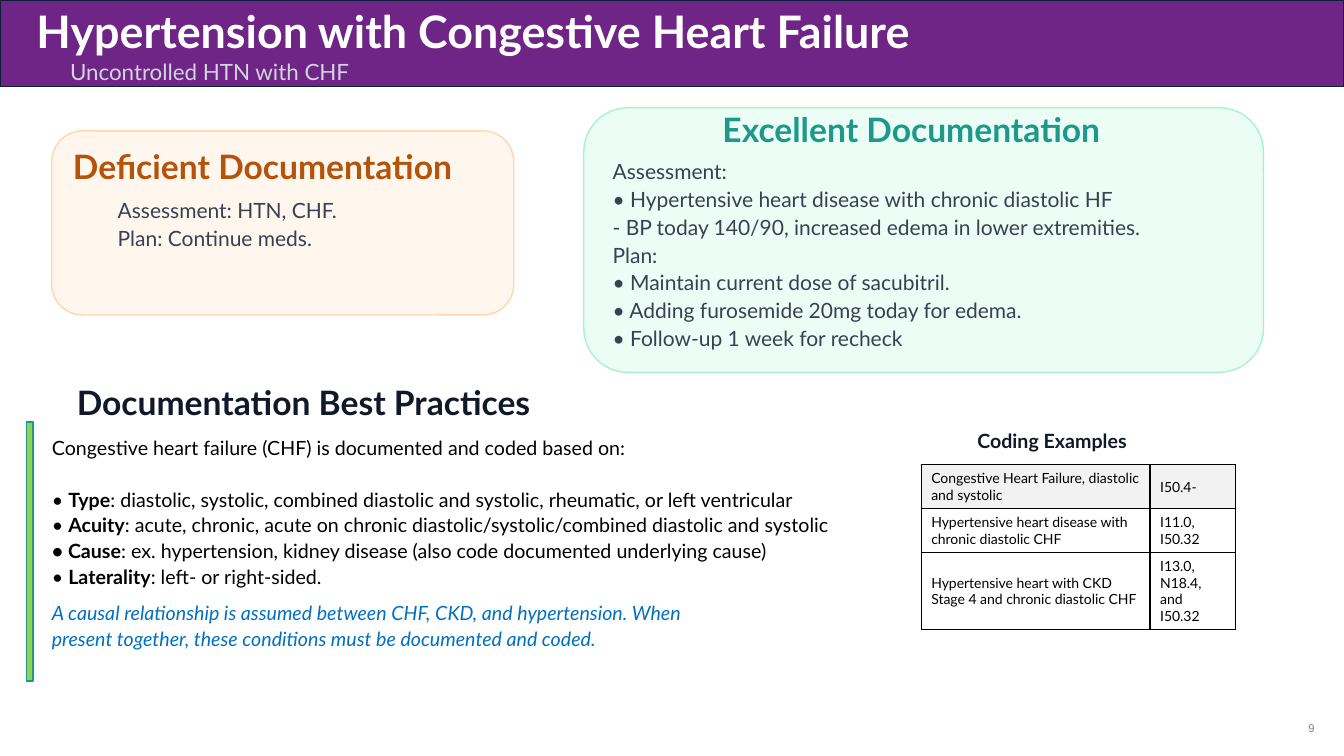
from lxml.etree import SubElement
from pptx import Presentation
from pptx.dml.color import RGBColor
from pptx.enum.shapes import MSO_SHAPE as Shape
from pptx.enum.text import MSO_ANCHOR as Anchor, PP_ALIGN as Align
from pptx.oxml import parse_xml
from pptx.oxml.ns import nsdecls, qn
from pptx.util import Pt

WHITE = RGBColor(0xFF, 0xFF, 0xFF)
BLACK = RGBColor(0x00, 0x00, 0x00)
PURPLE = RGBColor(0x6E, 0x25, 0x85)
NAVY = RGBColor(0x0B, 0x1F, 0x3A)
LIGHT_GRAY = RGBColor(0xD1, 0xD5, 0xDB)
CREAM = RGBColor(0xFF, 0xF7, 0xED)
PEACH = RGBColor(0xFE, 0xD7, 0xAA)
RUST = RGBColor(0xB4, 0x53, 0x09)
SLATE = RGBColor(0x37, 0x41, 0x51)
MINT = RGBColor(0xEC, 0xFD, 0xF5)
PALE_GREEN = RGBColor(0xA7, 0xF3, 0xD0)
TEAL = RGBColor(0x1B, 0x99, 0x8B)
INK = RGBColor(0x11, 0x18, 0x27)
BLUE = RGBColor(0x00, 0x70, 0xC0)
LIME = RGBColor(0x92, 0xD0, 0x50)
HEADER_GRAY = RGBColor(0xF2, 0xF2, 0xF2)
NUMBER_GRAY = RGBColor(0x80, 0x80, 0x80)

EXCELLENT_NOTE = [
    "Assessment:",
    "• Hypertensive heart disease with chronic diastolic HF",
    "- BP today 140/90, increased edema in lower extremities.",
    "Plan:",
    "• Maintain current dose of sacubitril.",
    "• Adding furosemide 20mg today for edema.",
    "• Follow-up 1 week for recheck",
]
# Tuples alternate between regular and bold text.
BEST_PRACTICES = [
    "Congestive heart failure (CHF) is documented and coded based on:",
    ("• ", "Type", ": diastolic, systolic, combined diastolic and systolic, "
     "rheumatic, or left ventricular"),
    ("• ", "Acuity", ": acute, chronic, acute on chronic "
     "diastolic/systolic/combined diastolic and systolic"),
    ("", "• Cause", ": ex. hypertension, kidney disease "
     "(also code documented underlying cause)"),
    ("• ", "Laterality", ": left- or right-sided."),
]
CODES = [
    ("Congestive Heart Failure, diastolic and systolic", "I50.4-"),
    ("Hypertensive heart disease with chronic diastolic CHF", "I11.0, I50.32"),
    ("Hypertensive heart with CKD Stage 4 and chronic diastolic CHF",
     "I13.0,\nN18.4, and I50.32"),
]


class SlideWriter:
    def __init__(self, page, font):
        self.page = page
        self.font = font

    def style(self, font, size, color, bold=False, italic=False, name=None):
        font.name = name or self.font
        font.size = Pt(size)
        font.color.rgb = color
        font.bold = bold
        font.italic = italic

    def panel(self, kind, place, fill, line):
        shape = self.page.shapes.add_shape(kind, *map(Pt, place))
        shape.shadow.inherit = False
        shape.fill.solid()
        shape.fill.fore_color.rgb = fill
        shape.line.color.rgb = line
        shape.line.width = Pt(1)

    def text(self, place, lines, size, color, bold=False, italic=False,
             align=Align.LEFT, anchor=Anchor.MIDDLE, spacing=None, name=None):
        box = self.page.shapes.add_textbox(*map(Pt, place))
        frame = box.text_frame
        frame.word_wrap = True
        frame.vertical_anchor = anchor
        for index, line in enumerate(lines):
            para = frame.add_paragraph() if index else frame.paragraphs[0]
            para.alignment = align
            para.line_spacing = spacing
            spans = (line,) if isinstance(line, str) else line
            for position, words in enumerate(spans):
                if words:
                    span = para.add_run()
                    span.text = words
                    self.style(span.font, size, color,
                               bold or position % 2 == 1, italic, name)
        return frame

    def heading(self, place, words, size, color):
        self.text(place, [words], size, color, bold=True, align=Align.CENTER)

    def table(self, place, rows, widths, heights):
        table = self.page.shapes.add_table(
            len(rows), len(widths), *map(Pt, place)).table
        for column, width in zip(table.columns, widths):
            column.width = Pt(width)
        for row, height, values in zip(table.rows, heights, rows):
            row.height = Pt(height)
            for cell, value in zip(row.cells, values):
                cell.text_frame.text = value
                cell.vertical_anchor = Anchor.MIDDLE
                for para in cell.text_frame.paragraphs:
                    self.style(para.runs[0].font, 10, BLACK)
                if values is rows[0]:
                    cell.fill.solid()
                    cell.fill.fore_color.rgb = HEADER_GRAY
                else:
                    cell.fill.background()
                self.borders(cell)

    def borders(self, cell):
        properties = cell._tc.get_or_add_tcPr()
        for index, side in enumerate(("lnL", "lnR", "lnT", "lnB")):
            line = parse_xml(f'<a:{side} {nsdecls("a")} w="{Pt(1)}"/>')
            fill = SubElement(line, qn("a:solidFill"))
            SubElement(fill, qn("a:srgbClr"), val=str(BLACK))
            properties.insert(index, line)


def main():
    deck = Presentation()
    deck.slide_width, deck.slide_height = Pt(960), Pt(540)
    page = deck.slides.add_slide(deck.slide_layouts[6])
    writer = SlideWriter(page, "Lato")

    writer.panel(Shape.RECTANGLE, (0, 0, 960, 62), PURPLE, NAVY)
    writer.text((19, 10, 873, 23),
                ["Hypertension with Congestive Heart Failure"],
                32, WHITE, bold=True)
    writer.text((43, 42, 873, 18), ["Uncontrolled HTN with CHF"],
                16, LIGHT_GRAY)

    writer.panel(Shape.ROUNDED_RECTANGLE, (37, 93.5, 330, 131.5), CREAM, PEACH)
    writer.heading((30, 107.5, 315, 22), "Deficient Documentation", 24, RUST)
    writer.text((77, 136, 208, 82),
                ["Assessment: HTN, CHF.", "Plan: Continue meds."],
                15, SLATE, anchor=Anchor.TOP, spacing=1.1)

    writer.panel(Shape.ROUNDED_RECTANGLE, (417, 77, 485.5, 189),
                 MINT, PALE_GREEN)
    writer.heading((446, 81, 410, 22), "Excellent Documentation", 24, TEAL)
    writer.text((430.5, 103, 461.5, 156), EXCELLENT_NOTE,
                15, SLATE, spacing=1.1)

    writer.heading((11, 277, 417.5, 20), "Documentation Best Practices ",
                   24, INK)
    practices = writer.text((30, 306, 571, 198), BEST_PRACTICES, 14, BLACK,
                            anchor=Anchor.TOP, spacing=1.1)
    practices.paragraphs[1].space_before = Pt(18.5)
    writer.text((30, 424, 510, 65),
                ["A causal relationship is assumed between CHF, CKD, and "
                 "hypertension. When present together, these conditions "
                 "must be documented and coded."],
                14, BLUE, italic=True, anchor=Anchor.TOP, spacing=1.1)
    writer.panel(Shape.RECTANGLE, (19, 301.5, 4.5, 185), LIME, TEAL)

    writer.heading((621, 305, 261, 20), "Coding Examples", 14, INK)
    writer.table((658, 332, 224.5, 106), CODES,
                 widths=(163.5, 61), heights=(31, 31, 43.5))

    number = writer.text((911, 505.5, 28, 29), ["9"], 8, NUMBER_GRAY,
                         align=Align.RIGHT, name="Arial")
    number.margin_right = 0

    deck.save("out.pptx")


if __name__ == "__main__":
    main()
